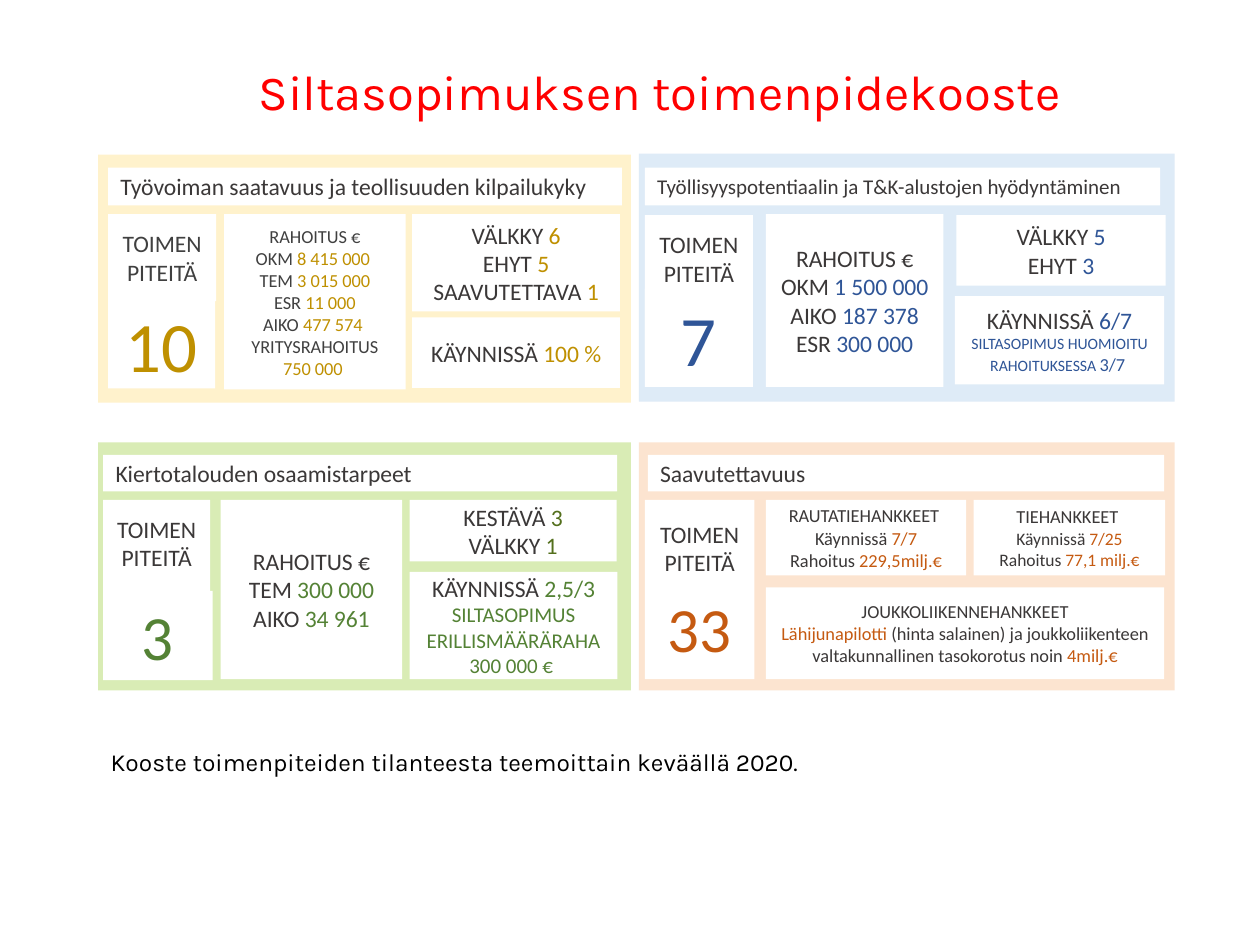
"""Build the summary slide of measures in four themed panels."""
from dataclasses import dataclass

from pptx import Presentation
from pptx import util as u
from pptx.dml.color import RGBColor
from pptx.enum import shapes, text

HUES = {
    "white": "FFFFFF", "black": "000000", "red": "FF0000",
    "ink": "3B3838", "gray": "404040",
    "cream": "FFF2CC", "gold": "BF9000",
    "sky": "DEEBF7", "blue": "2F5597",
    "lime": "D9ECB5", "green": "548235", "moss": "536F1C",
    "peach": "FCE4D0", "rust": "C55A11",
}
LABEL = ("TOIMEN", "PITEITÄ")
Box = tuple[float, float, float, float]


@dataclass
class Tile:
    """A white tile; in each line, parts split by | alternate ink and tone."""
    box: Box
    lines: tuple[str, ...]
    size: float = 13.5
    rest: float | None = None
    ink: str = "ink"
    tone: str | None = None
    left: bool = False
    drop: float | None = None


@dataclass
class Panel:
    """A coloured panel with its accent and tiles."""
    box: Box
    fill: str
    tone: str
    tiles: list[Tile]


def rgb(name: str) -> RGBColor:
    """Return the named colour."""
    return RGBColor.from_string(HUES[name])


def write(frame, lines, *, size, rest=None, font="Calibri", ink="ink",
          tone="ink", left=False) -> None:
    """Fill a frame; a part may end in @size, and rest sizes later lines."""
    frame.word_wrap = True
    for row, line in enumerate(lines):
        para = frame.add_paragraph() if row else frame.paragraphs[0]
        para.alignment = text.PP_ALIGN.LEFT if left else text.PP_ALIGN.CENTER
        for spot, part in enumerate(line.split("|")):
            if not part:
                continue
            words, _, own = part.partition("@")
            run = para.add_run()
            run.text = words
            run.font.name = font
            run.font.size = u.Pt(float(own or (rest if row and rest else size)))
            run.font.color.rgb = rgb(tone if spot % 2 else ink)


def block(slide, box: Box, fill: str):
    """Draw a plain filled rectangle."""
    shape = slide.shapes.add_shape(shapes.MSO_SHAPE.RECTANGLE, *map(u.Cm, box))
    shape.shadow.inherit = False
    shape.fill.solid()
    shape.fill.fore_color.rgb = rgb(fill)
    shape.line.fill.background()
    return shape


def draw(slide, panel: Panel) -> None:
    """Draw a panel and its tiles."""
    block(slide, panel.box, panel.fill)
    for tile in panel.tiles:
        frame = block(slide, tile.box, "white").text_frame
        frame.vertical_anchor = text.MSO_ANCHOR.MIDDLE
        if tile.drop:
            frame.vertical_anchor = text.MSO_ANCHOR.TOP
            frame.margin_top = u.Cm(tile.drop)
        write(frame, tile.lines, size=tile.size, rest=tile.rest, ink=tile.ink,
              tone=tile.tone or panel.tone, left=tile.left)


def note(slide, box: Box, words: str, **form) -> None:
    """Add a text box in the heading font."""
    frame = slide.shapes.add_textbox(*map(u.Cm, box)).text_frame
    write(frame, (words,), font="Karla", **form)
    frame.auto_size = text.MSO_AUTO_SIZE.SHAPE_TO_FIT_TEXT


PANELS = [
    Panel((1.98, 3.12, 10.74, 5), "cream", "gold", [
        Tile((2.18, 3.38, 10.36, 0.76),
             ("Työvoiman saatavuus ja teollisuuden kilpailukyky",), left=True),
        Tile((2.18, 4.32, 2.18, 1.75), LABEL, ink="gray", drop=0.3),
        Tile((2.18, 6.05, 2.16, 1.78), ("|10",), 40.5),
        Tile((4.52, 4.32, 3.66, 3.53),
             ("RAHOITUS €", "OKM |8 415 000 ", "TEM |3 015 000", "ESR |11 000",
              "AIKO |477 574 ", "YRITYSRAHOITUS", "|750 000 "), 10.5, ink="gray"),
        Tile((8.31, 4.32, 4.19, 1.96),
             ("VÄLKKY |6", "EHYT |5", "SAAVUTETTAVA |1")),
        Tile((8.31, 6.4, 4.19, 1.42), ("KÄYNNISSÄ |100 %",)),
    ]),
    Panel((12.88, 3.1, 10.8, 5), "sky", "blue", [
        Tile((13, 3.38, 10.39, 0.76),
             ("Työllisyyspotentiaalin ja T&K-alustojen hyödyntäminen",), 12,
             left=True),
        Tile((13, 4.34, 2.18, 2.92), LABEL, drop=0.3),
        Tile((13, 5.82, 2.18, 1.98), ("|7",), 40.5),
        Tile((15.44, 4.32, 3.58, 3.48),
             ("RAHOITUS €", "OKM |1 500 000", "AIKO |187 378", "ESR |300 000")),
        Tile((19.28, 4.34, 4.22, 1.42), ("VÄLKKY |5", "EHYT |3")),
        Tile((19.25, 5.97, 4.22, 1.78),
             ("KÄYNNISSÄ |6/7",
              "|SILTASOPIMUS HUOMIOITU RAHOITUKSESSA ||3/7@10.5| "), rest=9),
    ]),
    Panel((1.98, 8.92, 10.74, 5), "lime", "green", [
        Tile((2.08, 9.17, 10.36, 0.74), ("Kiertotalouden osaamistarpeet",),
             left=True),
        Tile((2.08, 10.08, 2.16, 3.43), LABEL, drop=0.3),
        Tile((2.08, 11.91, 2.21, 1.8), ("|3",), 36),
        Tile((4.45, 10.08, 3.66, 3.61),
             ("RAHOITUS €", "TEM |300 000", "AIKO |34 961")),
        Tile((8.26, 10.08, 4.17, 1.24), ("KESTÄVÄ |3", "VÄLKKY |1"), tone="moss"),
        Tile((8.26, 11.53, 4.19, 2.16),
             ("KÄYNNISSÄ |2,5/3", "|SILTASOPIMUS ERILLISMÄÄRÄRAHA 300 000 € "),
             rest=12),
    ]),
    Panel((12.88, 8.92, 10.8, 5), "peach", "rust", [
        Tile((13.06, 9.17, 10.41, 0.74), ("Saavutettavuus",), left=True),
        Tile((13, 10.08, 2.21, 3.61), LABEL, drop=0.4),
        Tile((13.08, 11.76, 2.06, 1.78), ("|33",), 36),
        Tile((15.44, 10.08, 4.04, 1.52),
             ("RAUTATIEHANKKEET ", "Käynnissä |7/7", "Rahoitus |229,5milj.€"),
             10.5),
        Tile((19.63, 10.08, 3.86, 1.52),
             ("TIEHANKKEET ", "Käynnissä |7/25", "Rahoitus |77,1 milj.€"),
             10.5, rest=10),
        Tile((15.44, 11.84, 8.03, 1.85),
             ("JOUKKOLIIKENNEHANKKEET",
              "|Lähijunapilotti |(hinta salainen) ja joukkoliikenteen "
              "valtakunnallinen tasokorotus noin |4milj.€"), 10.5),
    ]),
]


def main() -> None:
    """Build and save the deck."""
    deck = Presentation()
    deck.slide_width, deck.slide_height = u.Cm(25.4), u.Cm(19.05)
    slide = deck.slides.add_slide(deck.slide_layouts[6])
    for panel in PANELS:
        draw(slide, panel)
    note(slide, (2.69, 1.12, 21.21, 1.45), "Siltasopimuksen toimenpidekooste",
         size=28, ink="red")
    note(slide, (1.98, 14.94, 18.11, 0.86),
         "Kooste toimenpiteiden tilanteesta teemoittain keväällä 2020.",
         size=14, ink="black", left=True)
    deck.save("out.pptx")


if __name__ == "__main__":
    main()
